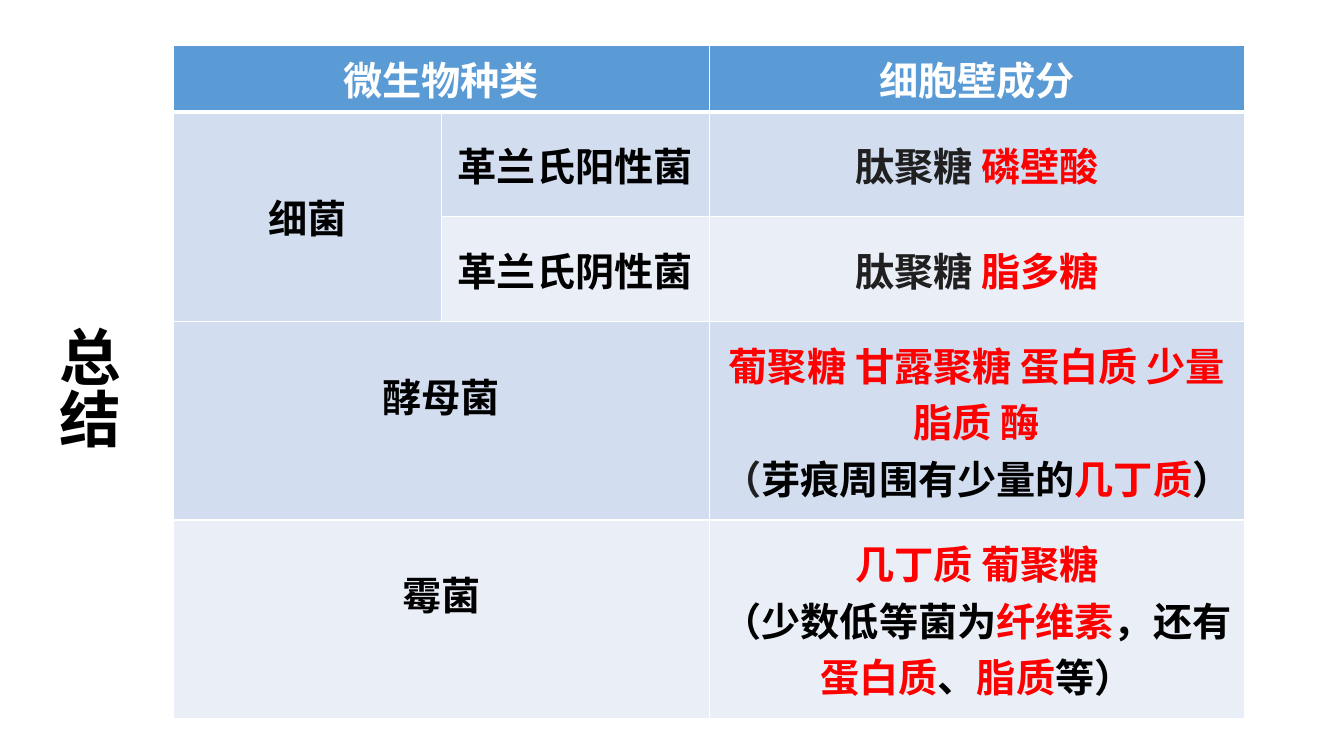
import pptx
import pptx.dml.color
import pptx.enum.text
import pptx.oxml.ns
import pptx.util
from lxml import etree

Cm, Pt = pptx.util.Cm, pptx.util.Pt
ALIGN = pptx.enum.text.PP_ALIGN
ANCHOR = pptx.enum.text.MSO_ANCHOR

# Content: each cell is (row, column, paragraphs); each paragraph is a list of (text, colour)
FONT = "Noto Sans CJK SC"
BLACK, DARK, RED, WHITE = "000000", "202020", "FF0000", "FFFFFF"
HEADER, BAND, LIGHT = "5B9BD5", "D2DEEF", "EAEFF7"
TITLE = "总结"
CELLS = [
    (0, 0, [[("微生物种类", WHITE)]]),
    (0, 2, [[("细胞壁成分", WHITE)]]),
    (1, 0, [[("细菌", BLACK)]]),
    (1, 1, [[("革兰氏阳性菌", BLACK)]]),
    (1, 2, [[("肽聚糖", DARK), (" 磷壁酸", RED)]]),
    (2, 1, [[("革兰氏阴性菌", BLACK)]]),
    (2, 2, [[("肽聚糖", DARK), (" 脂多糖", RED)]]),
    (3, 0, [[("酵母菌", BLACK)]]),
    (3, 2, [[("葡聚糖 甘露聚糖 蛋白质 少量脂质 酶", RED)],
            [("（", DARK), ("芽痕周围有少量的", BLACK), ("几丁质", RED), ("）", BLACK)]]),
    (4, 0, [[("霉菌", BLACK)]]),
    (4, 2, [[("几丁质 葡聚糖", RED)],
            [("（少数低等菌为", BLACK), ("纤维素", RED), ("，还有", BLACK), ("蛋白质", RED),
             ("、", BLACK), ("脂质", RED), ("等）", BLACK)]]),
]
MERGES = [((0, 0), (0, 1)), ((1, 0), (2, 0)), ((3, 0), (3, 1)), ((4, 0), (4, 1))]
RAISED = [(3, 0), (4, 0)]  # labels sitting above the middle of their row
ROW_FILLS = [HEADER, BAND, LIGHT, BAND, LIGHT]
COLUMN_WIDTHS = [6.75, 6.75, 13.5]
ROW_HEIGHTS = [1.47, 2.64, 2.64, 5, 5]


def colour(value):
    return pptx.dml.color.RGBColor.from_string(value)


def add_run(paragraph, text, size, value):
    run = paragraph.add_run()
    run.text = text
    run.font.size = Pt(size)
    run.font.bold = True
    run.font.name = FONT
    run.font.color.rgb = colour(value)
    east_asian = etree.SubElement(run.font._element, pptx.oxml.ns.qn("a:ea"))
    east_asian.set("typeface", FONT)


def set_borders(cell, widths):
    """Draw white borders; widths in points follow left, right, top, bottom."""
    properties = cell._tc.get_or_add_tcPr()
    for index, (side, width) in enumerate(zip("LRTB", widths)):
        line = etree.Element(pptx.oxml.ns.qn("a:ln" + side), w=str(Pt(width)))
        fill = etree.SubElement(line, pptx.oxml.ns.qn("a:solidFill"))
        etree.SubElement(fill, pptx.oxml.ns.qn("a:srgbClr"), val=WHITE)
        properties.insert(index, line)


presentation = pptx.Presentation()
presentation.slide_width, presentation.slide_height = Cm(33.87), Cm(19.05)
slide = presentation.slides.add_slide(presentation.slide_layouts[5])

# Vertical title
title = slide.shapes.title
title.left, title.top, title.width, title.height = Cm(1.02), Cm(8.1), Cm(2.39), Cm(7.98)
frame = title.text_frame
frame.word_wrap = True
frame.auto_size = pptx.enum.text.MSO_AUTO_SIZE.SHAPE_TO_FIT_TEXT
frame.vertical_anchor = ANCHOR.TOP
frame._txBody.bodyPr.set("vert", "eaVert")
frame.paragraphs[0].alignment = ALIGN.LEFT
add_run(frame.paragraphs[0], TITLE, 44, BLACK)

# Table grid
table = slide.shapes.add_table(
    len(ROW_HEIGHTS), len(COLUMN_WIDTHS), Cm(4.37), Cm(1.14),
    Cm(sum(COLUMN_WIDTHS)), Cm(sum(ROW_HEIGHTS))).table
for column, width in zip(table.columns, COLUMN_WIDTHS):
    column.width = Cm(width)
for row, height in zip(table.rows, ROW_HEIGHTS):
    row.height = Cm(height)
for first, last in MERGES:
    table.cell(*first).merge(table.cell(*last))

# Fills and borders, with a thick rule under the header
for row_index, fill in enumerate(ROW_FILLS):
    for cell in table.rows[row_index].cells:
        cell.fill.solid()
        cell.fill.fore_color.rgb = colour(fill)
        set_borders(cell, (1, 1, 3 if row_index == 1 else 1, 3 if row_index == 0 else 1))

# Cell text
for row_index, column_index, paragraphs in CELLS:
    cell = table.cell(row_index, column_index)
    cell.vertical_anchor = ANCHOR.MIDDLE
    if (row_index, column_index) in RAISED:
        cell.margin_bottom = Cm(1.4)
    for index, runs in enumerate(paragraphs):
        frame = cell.text_frame
        paragraph = frame.add_paragraph() if index else frame.paragraphs[0]
        paragraph.alignment = ALIGN.CENTER
        for text, value in runs:
            add_run(paragraph, text, 28, value)

presentation.save("out.pptx")
